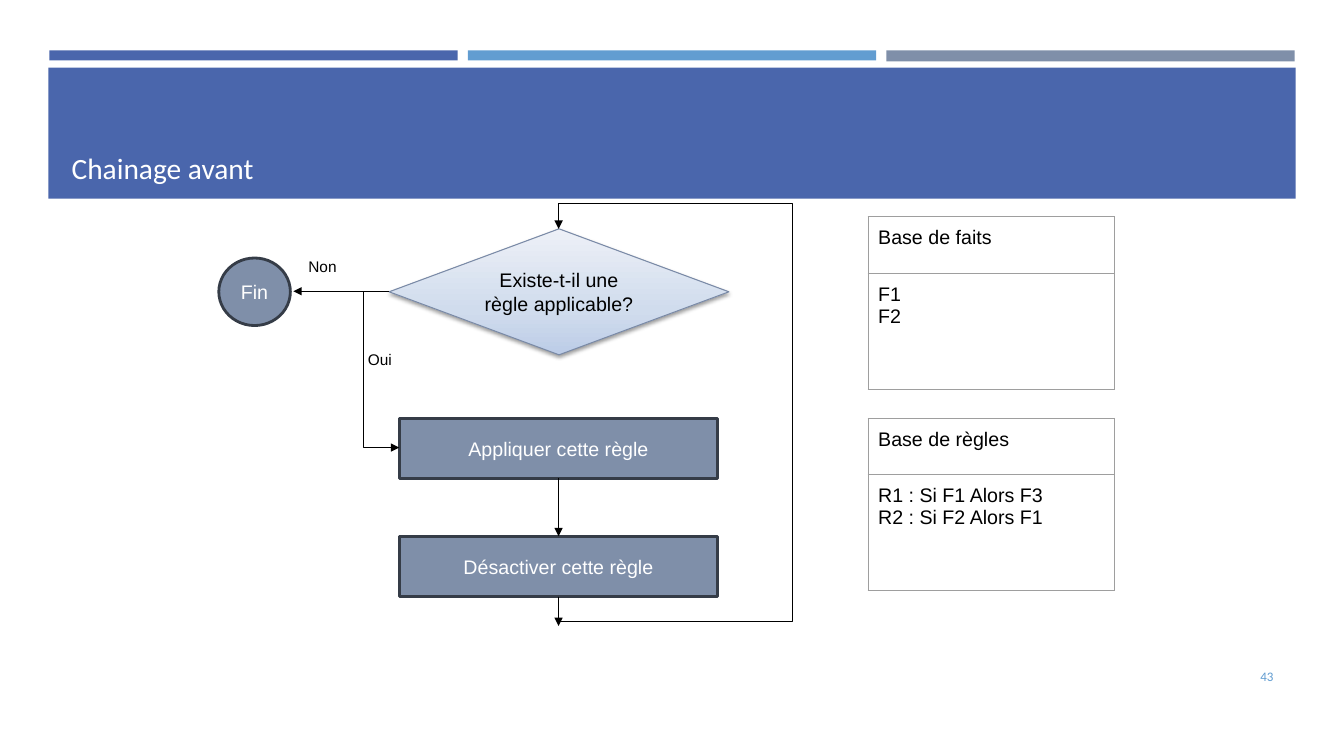
"""Build the forward-chaining flowchart slide."""
from copy import deepcopy
from dataclasses import dataclass

from lxml import etree
from pptx import Presentation
from pptx import util as u
from pptx.dml.color import RGBColor
from pptx.enum import shapes, text
from pptx.oxml import ns

WHITE = RGBColor(0xFF, 0xFF, 0xFF)
BLACK = RGBColor(0, 0, 0)
INDIGO = RGBColor(0x4A, 0x66, 0xAC)
SKY = RGBColor(0x62, 0x9D, 0xD1)
SLATE = RGBColor(0x7F, 0x8F, 0xA9)
DARK_SLATE = RGBColor(0x35, 0x3C, 0x47)
DIAMOND_EDGE = RGBColor(0x7A, 0x8A, 0xA6)
DIAMOND_STOPS = ((0, RGBColor(0xBC, 0xCC, 0xE7)), (0.35, RGBColor(0xD0, 0xDC, 0xED)),
                 (1, RGBColor(0xED, 0xF0, 0xF7)))
BORDER = RGBColor(0x9E, 0x9E, 0x9E)

CELL = u.Inches(0.1)
AXIS, DECISION_Y = 55.4, 28.9
LEFT, CENTER, RIGHT = text.PP_ALIGN.LEFT, text.PP_ALIGN.CENTER, text.PP_ALIGN.RIGHT


@dataclass(frozen=True)
class Area:
    """A rectangle in grid columns and rows."""
    col: float
    row: float
    cols: float
    rows: float

    def box(self) -> tuple[int, ...]:
        return tuple(grid(n) for n in (self.col, self.row, self.cols, self.rows))


@dataclass(frozen=True)
class Step:
    """A filled flowchart node."""
    caption: str
    kind: shapes.MSO_SHAPE
    area: Area


@dataclass(frozen=True)
class Base:
    """A knowledge base with a heading and its entries."""
    heading: str
    entries: tuple[str, ...]
    row: float


@dataclass(frozen=True)
class Label:
    """A free text with its place and format."""
    caption: str
    area: Area
    size: float = 11
    font: str = "Arial"
    color: RGBColor = BLACK
    align: text.PP_ALIGN = LEFT
    anchor: text.MSO_ANCHOR = text.MSO_ANCHOR.TOP
    margins: tuple[float, float] = (1, 0.5)


BANDS = ((INDIGO, Area(4.9, 5, 40.5, 1)), (SKY, Area(46.4, 5, 40.5, 1)),
         (SLATE, Area(87.9, 5, 40.5, 1.1)), (INDIGO, Area(4.8, 6.7, 123.7, 13)))
TITLE = Label("Chainage avant", Area(6.4, 7.7, 120.6, 11.1), 21, "Calibri", WHITE,
              anchor=text.MSO_ANCHOR.BOTTOM, margins=(0.7, 0.4))
DECISION = Step("Existe-t-il une règle applicable?", shapes.MSO_SHAPE.DIAMOND,
                Area(38.6, 22.7, 33.7, 12.5))
STEPS = (Step("Appliquer cette règle", shapes.MSO_SHAPE.RECTANGLE, Area(39.6, 41.5, 31.6, 6)),
         Step("Désactiver cette règle", shapes.MSO_SHAPE.RECTANGLE, Area(39.6, 53.2, 31.6, 6)),
         Step("Fin", shapes.MSO_SHAPE.OVAL, Area(21.7, 25.6, 7.1, 6.7)))
ROUTES = (((38.6, DECISION_Y), (36.1, DECISION_Y), (36.1, 44.4), (39.6, 44.4)),
          ((AXIS, 59.2), (AXIS, 61.7), (78.6, 61.7), (78.6, 20.2), (AXIS, 20.2), (AXIS, 22.7)),
          ((AXIS, 47.4), (AXIS, 53.2)),
          ((AXIS, 59.2), (AXIS, 62.1)),
          ((38.6, DECISION_Y), (29.1, DECISION_Y)))
LABELS = (Label("Oui", Area(35.5, 34.2, 5.2, 2.9)),
          Label("Non", Area(29.6, 25, 5.2, 2.9)),
          Label("43", Area(115.5, 65.1, 11.5, 4), 9.3, "Calibri", SKY, RIGHT,
                text.MSO_ANCHOR.MIDDLE, (0.7, 0.4)))
BASES = (Base("Base de faits", ("F1", "F2"), 21.5),
         Base("Base de règles", ("R1 : Si F1 Alors F3", "R2 : Si F2 Alors F1"), 41.5))


def grid(cells: float) -> u.Emu:
    """Turn a count of grid cells into a length."""
    return u.Emu(round(cells * CELL))


def write(holder, label: Label) -> None:
    """Fill a shape's text frame as the label says."""
    frame = holder.text_frame
    frame.text = label.caption
    frame.word_wrap = True
    frame.auto_size = text.MSO_AUTO_SIZE.NONE
    frame.vertical_anchor = label.anchor
    side, end = (grid(m) for m in label.margins)
    frame.margin_left = frame.margin_right = side
    frame.margin_top = frame.margin_bottom = end
    style(frame, label.size, label.font, label.color, label.align)


def style(frame, size: float, font: str, color: RGBColor, align: text.PP_ALIGN) -> None:
    """Format every run of a text frame."""
    for paragraph in frame.paragraphs:
        paragraph.alignment = align
        for run in paragraph.runs:
            run.font.size, run.font.name = u.Pt(size), font
            run.font.color.rgb = color


def draw_band(slide, color: RGBColor, area: Area) -> None:
    """Draw a plain coloured bar."""
    band = slide.shapes.add_shape(shapes.MSO_SHAPE.RECTANGLE, *area.box())
    band.fill.solid()
    band.fill.fore_color.rgb = color
    band.line.fill.background()
    band.shadow.inherit = False


def draw_step(slide, step: Step, edge: RGBColor, width: float, ink: RGBColor):
    """Draw a flowchart node and return it."""
    node = slide.shapes.add_shape(step.kind, *step.area.box())
    node.fill.solid()
    node.fill.fore_color.rgb = SLATE
    node.line.color.rgb, node.line.width = edge, u.Pt(width)
    node.shadow.inherit = False
    write(node, Label(step.caption, step.area, 14, color=ink, align=CENTER,
                      anchor=text.MSO_ANCHOR.MIDDLE))
    return node


def draw_decision(slide) -> None:
    """Draw the shaded diamond with its soft shadow."""
    diamond = draw_step(slide, DECISION, DIAMOND_EDGE, 0.75, BLACK)
    diamond.fill.gradient()
    diamond.fill.gradient_angle = 90
    stop_list = diamond.element.spPr.find(".//" + ns.qn("a:gsLst"))
    stop_list.insert(1, deepcopy(stop_list[0]))
    for stop, (position, color) in zip(diamond.fill.gradient_stops, DIAMOND_STOPS):
        stop.position, stop.color.rgb = position, color
    shadow = etree.SubElement(
        diamond.element.spPr.find(ns.qn("a:effectLst")), ns.qn("a:outerShdw"),
        blurRad=str(u.Pt(3.1)), dist=str(u.Pt(1.6)), dir="5400000", rotWithShape="0")
    tint = etree.SubElement(shadow, ns.qn("a:srgbClr"), val=str(BLACK))
    etree.SubElement(tint, ns.qn("a:alpha"), val="38000")


def draw_route(slide, route: tuple[tuple[float, float], ...]) -> None:
    """Draw an arrow through the given grid points."""
    points = [(grid(x), grid(y)) for x, y in route]
    if len(points) == 2:
        arrow = slide.shapes.add_connector(shapes.MSO_CONNECTOR.STRAIGHT, *points[0], *points[1])
    else:
        outline = slide.shapes.build_freeform(*points[0])
        outline.add_line_segments(points[1:], close=False)
        arrow = outline.convert_to_shape()
        arrow.fill.background()
    arrow.line.color.rgb, arrow.line.width = BLACK, u.Pt(0.75)
    properties = arrow.element.spPr
    etree.SubElement(properties.get_or_add_ln(), ns.qn("a:tailEnd"), type="triangle")
    etree.SubElement(properties, ns.qn("a:effectLst"))


def draw_base(slide, base: Base) -> None:
    """Draw a knowledge base as a two-row table."""
    table = slide.shapes.add_table(2, 1, *Area(86.1, base.row, 24.4, 17.1).box()).table
    table.first_row = table.horz_banding = False
    for index, (content, rows) in enumerate(((base.heading, 5.6), ("\n".join(base.entries), 11.5))):
        table.rows[index].height = grid(rows)
        cell = table.cell(index, 0)
        cell.text_frame.text = content
        cell.margin_left = cell.margin_right = cell.margin_top = cell.margin_bottom = grid(1)
        style(cell.text_frame, 14, "Arial", BLACK, LEFT)
        cell.fill.background()
        for place, side in enumerate(("lnL", "lnR", "lnT", "lnB")):
            edge = etree.Element(ns.qn("a:" + side), w=str(u.Pt(0.75)))
            paint = etree.SubElement(edge, ns.qn("a:solidFill"))
            etree.SubElement(paint, ns.qn("a:srgbClr"), val=str(BORDER))
            cell._tc.tcPr.insert(place, edge)


def main() -> None:
    """Assemble and save the slide."""
    deck = Presentation()
    deck.slide_width, deck.slide_height = u.Inches(13.33), u.Inches(7.5)
    slide = deck.slides.add_slide(deck.slide_layouts[5])
    for color, area in BANDS:
        draw_band(slide, color, area)
    heading = slide.shapes.title
    heading.left, heading.top, heading.width, heading.height = TITLE.area.box()
    write(heading, TITLE)
    slide.shapes.element.append(heading.element)
    draw_decision(slide)
    for step in STEPS:
        draw_step(slide, step, DARK_SLATE, 2, WHITE)
    for route in ROUTES:
        draw_route(slide, route)
    for label in LABELS:
        write(slide.shapes.add_textbox(*label.area.box()), label)
    for base in BASES:
        draw_base(slide, base)
    deck.save("out.pptx")


if __name__ == "__main__":
    main()
